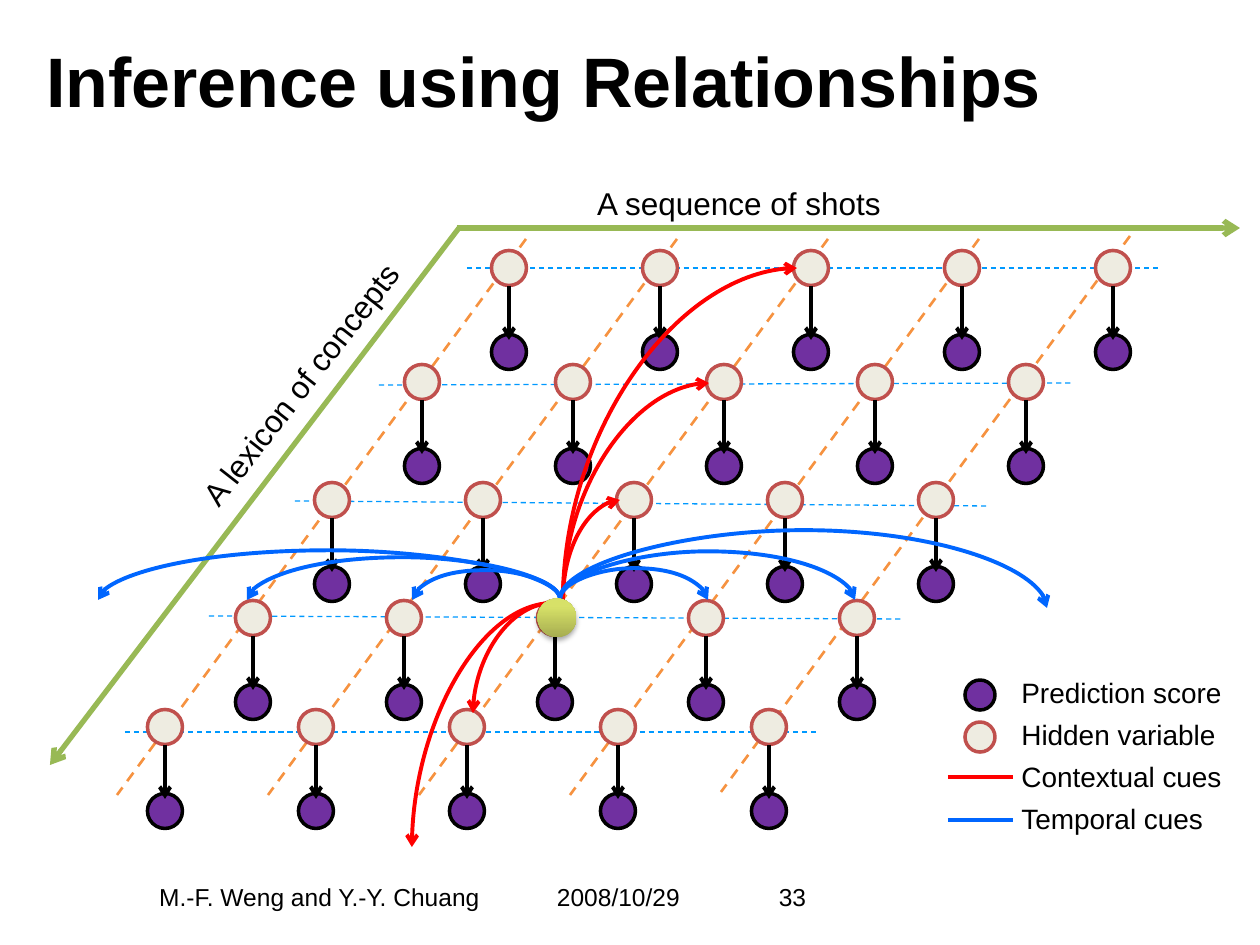
"""Build the slide about inference over a grid of concepts and shots."""
from dataclasses import dataclass
from typing import Optional

from lxml.etree import SubElement
from pptx import Presentation
from pptx.dml.color import RGBColor
from pptx.enum.dml import MSO_LINE
from pptx.enum.shapes import MSO_CONNECTOR, MSO_SHAPE
from pptx.enum.text import MSO_ANCHOR, PP_ALIGN
from pptx.oxml.ns import qn
from pptx.shapes.autoshape import Shape
from pptx.shapes.connector import Connector
from pptx.slide import Slide
from pptx.util import Emu, Inches, Pt

SCALE = Inches(10) / 1260
BLACK = RGBColor(0x00, 0x00, 0x00)
PURPLE = RGBColor(0x70, 0x30, 0xA0)
CREAM = RGBColor(0xEE, 0xEC, 0xE1)
BRICK = RGBColor(0xC0, 0x50, 0x4D)
RED = RGBColor(0xFF, 0x00, 0x00)
BLUE = RGBColor(0x00, 0x66, 0xFF)
SKY = RGBColor(0x00, 0x99, 0xFF)
ORANGE = RGBColor(0xF6, 0x92, 0x40)
GREEN = RGBColor(0x98, 0xB9, 0x55)
OLIVE = RGBColor(0xA6, 0xAD, 0x50)
LIME = RGBColor(0xD7, 0xE1, 0x68)

COLUMNS, COLUMN_STEP = 5, 151
NODE_SIZE, SCORE_DROP = 35, 84
HUB_X, HUB_Y = 560, 599


@dataclass(frozen=True)
class Label:
    text: str
    left: int
    top: int
    width: int
    height: int
    size: int
    align: PP_ALIGN = PP_ALIGN.CENTER
    anchor: MSO_ANCHOR = MSO_ANCHOR.TOP
    bold: bool = False
    rotation: int = 0


@dataclass(frozen=True)
class Stroke:
    color: RGBColor
    width: float
    dashed: bool = False
    arrow: Optional[str] = None


@dataclass(frozen=True)
class Row:
    node_x: int
    node_y: int
    guide_left: int
    guide_start_y: int
    guide_end_y: int


@dataclass(frozen=True)
class Arc:
    target_x: int
    target_y: int
    rise: int


LABELS = [
    Label("Inference using Relationships", 34, 0, 1022, 158, 40,
          PP_ALIGN.LEFT, MSO_ANCHOR.MIDDLE, True),
    Label("2008/10/29", 544, 867, 149, 59, 14, anchor=MSO_ANCHOR.MIDDLE),
    Label("M.-F. Weng and Y.-Y. Chuang", 120, 867, 399, 59, 14, anchor=MSO_ANCHOR.MIDDLE),
    Label("33", 718, 867, 149, 59, 14, anchor=MSO_ANCHOR.MIDDLE),
    Label("A sequence of shots", 567, 178, 344, 51, 18),
    Label("A lexicon of concepts", 126, 359, 349, 51, 18, rotation=308),
]
LEGEND = ["Prediction score", "Hidden variable", "Contextual cues", "Temporal cues"]
LEGEND_TOP, LEGEND_STEP = 669, 42
ROWS = [
    Row(509, 268, 467, 268, 268),
    Row(422, 382, 379, 385, 383),
    Row(332, 500, 295, 501, 506),
    Row(253, 618, 209, 616, 619),
    Row(165, 727, 125, 732, 732),
]
DIAGONAL_TOPS = [239, 239, 239, 239, 236]
UPPER_CONTEXT = [(797, 268), (709, 383), (620, 500)]
LOWER_CONTEXT = [(473, 713), (412, 847)]
TEMPORAL_ARCS = [
    Arc(412, 600, 30), Arc(247, 600, 43), Arc(98, 599 + 1, 50),
    Arc(708, 600, 32), Arc(855, 600, 49), Arc(1047, 608, 78),
]
STEM = Stroke(BLACK, 2.25, arrow="tailEnd")
AXIS = Stroke(GREEN, 3, arrow="tailEnd")


def px(length: float) -> Emu:
    return Emu(round(length * SCALE))


def add_label(slide: Slide, label: Label) -> None:
    box = slide.shapes.add_textbox(
        px(label.left), px(label.top), px(label.width), px(label.height))
    box.rotation = label.rotation
    frame = box.text_frame
    frame.word_wrap = True
    frame.vertical_anchor = label.anchor
    paragraph = frame.paragraphs[0]
    paragraph.alignment = label.align
    run = paragraph.add_run()
    run.text = label.text
    run.font.name = "Arial"
    run.font.size = Pt(label.size)
    run.font.bold = label.bold
    run.font.color.rgb = BLACK


def add_circle(slide: Slide, x: float, y: float, size: int) -> Shape:
    circle = slide.shapes.add_shape(
        MSO_SHAPE.OVAL, px(x - size / 2), px(y - size / 2), px(size), px(size))
    circle.shadow.inherit = False
    return circle


def add_node(slide: Slide, x: int, y: int, fill: RGBColor, outline: RGBColor,
             size: int = NODE_SIZE) -> None:
    node = add_circle(slide, x, y, size)
    node.fill.solid()
    node.fill.fore_color.rgb = fill
    node.line.color.rgb = outline
    node.line.width = Pt(2)


def add_line(slide: Slide, start: tuple[float, float], end: tuple[float, float],
             stroke: Stroke, kind: MSO_CONNECTOR = MSO_CONNECTOR.STRAIGHT) -> Connector:
    connector = slide.shapes.add_connector(
        kind, px(start[0]), px(start[1]), px(end[0]), px(end[1]))
    connector.line.color.rgb = stroke.color
    connector.line.width = Pt(stroke.width)
    if stroke.dashed:
        connector.line.dash_style = MSO_LINE.DASH
    properties = connector._element.spPr
    if stroke.arrow:
        SubElement(properties.find(qn("a:ln")), qn(f"a:{stroke.arrow}"), type="arrow")
    SubElement(properties, qn("a:effectLst"))
    return connector


def add_context_curve(slide: Slide, start: tuple[int, int], end: tuple[int, int],
                      arrow: str) -> None:
    curve = add_line(slide, start, end, Stroke(RED, 2.25, arrow=arrow), MSO_CONNECTOR.CURVE)
    curve._element.spPr.find(qn("a:prstGeom")).set("prst", "curvedConnector2")


def add_temporal_arc(slide: Slide, arc: Arc) -> None:
    depth, span = arc.target_y - HUB_Y, abs(arc.target_x - HUB_X)
    center_x, center_y = (arc.target_x + HUB_X) / 2, (arc.target_y + HUB_Y) / 2
    side = 1 if arc.target_x < HUB_X else -1
    start = (center_x + side * depth / 2, center_y + span / 2)
    end = (center_x - side * depth / 2, center_y - span / 2)
    curve = add_line(slide, start, end, Stroke(BLUE, 2.25, arrow="headEnd"),
                     MSO_CONNECTOR.CURVE)
    properties = curve._element.spPr
    properties.find(qn("a:xfrm")).set("rot", str((180 - side * 90) * 60000))
    guides = properties.find(qn("a:prstGeom")).get_or_add_avLst()
    SubElement(guides, qn("a:gd"), name="adj1", fmla=f"val {arc.rise * 100000 // depth}")


def add_hub(slide: Slide) -> None:
    hub = add_circle(slide, 557, 618, 39)
    hub.line.fill.background()
    hub.fill.gradient()
    hub.fill.gradient_angle = 90
    for stop, color, position in zip(hub.fill.gradient_stops, (OLIVE, LIME), (0, 0.8)):
        stop.color.rgb = color
        stop.position = position
    effects = hub._element.spPr.find(qn("a:effectLst"))
    shadow = SubElement(effects, qn("a:outerShdw"), blurRad=str(Pt(3.1)),
                        dist=str(Pt(1.8)), dir="5400000", rotWithShape="0")
    shade = SubElement(shadow, qn("a:srgbClr"), val=str(BLACK))
    SubElement(shade, qn("a:alpha"), val="35000")


def add_legend(slide: Slide) -> None:
    for index, text in enumerate(LEGEND):
        top = LEGEND_TOP + index * LEGEND_STEP
        add_label(slide, Label(text, 1009, top, 231, 47, 16, PP_ALIGN.LEFT))
    add_node(slide, 980, 695, PURPLE, BLACK, 30)
    add_node(slide, 980, 737, CREAM, BRICK, 30)
    for y, color in ((777, RED), (820, BLUE)):
        add_line(slide, (948, y), (1013, y), Stroke(color, 2.25))


def add_grid(slide: Slide) -> None:
    for column, top in enumerate(DIAGONAL_TOPS):
        x = 526 + column * COLUMN_STEP
        add_line(slide, (x, top), (x - 409, top + 556), Stroke(ORANGE, 1.5, True))
    for row in ROWS:
        add_line(slide, (row.guide_left, row.guide_start_y),
                 (row.guide_left + 694, row.guide_end_y), Stroke(SKY, 0.75, True))
    add_line(slide, (457, 228), (1240, 228), AXIS)
    add_line(slide, (459, 228), (50, 765), AXIS)
    for row in ROWS:
        for column in range(COLUMNS):
            x, y = row.node_x + column * COLUMN_STEP, row.node_y
            add_node(slide, x, y, CREAM, BRICK)
            add_node(slide, x, y + SCORE_DROP, PURPLE, BLACK)
            add_line(slide, (x, y + 18), (x, y + 72), STEM)


def main() -> None:
    presentation = Presentation()
    presentation.slide_width, presentation.slide_height = px(1260), px(945)
    slide = presentation.slides.add_slide(presentation.slide_layouts[6])
    add_legend(slide)
    add_grid(slide)
    for label in LABELS:
        add_label(slide, label)
    for target in LOWER_CONTEXT:
        add_context_curve(slide, (553, 603), target, "tailEnd")
    for target in UPPER_CONTEXT:
        add_context_curve(slide, target, (563, 601), "headEnd")
    for arc in TEMPORAL_ARCS:
        add_temporal_arc(slide, arc)
    add_hub(slide)
    presentation.save("out.pptx")


if __name__ == "__main__":
    main()
